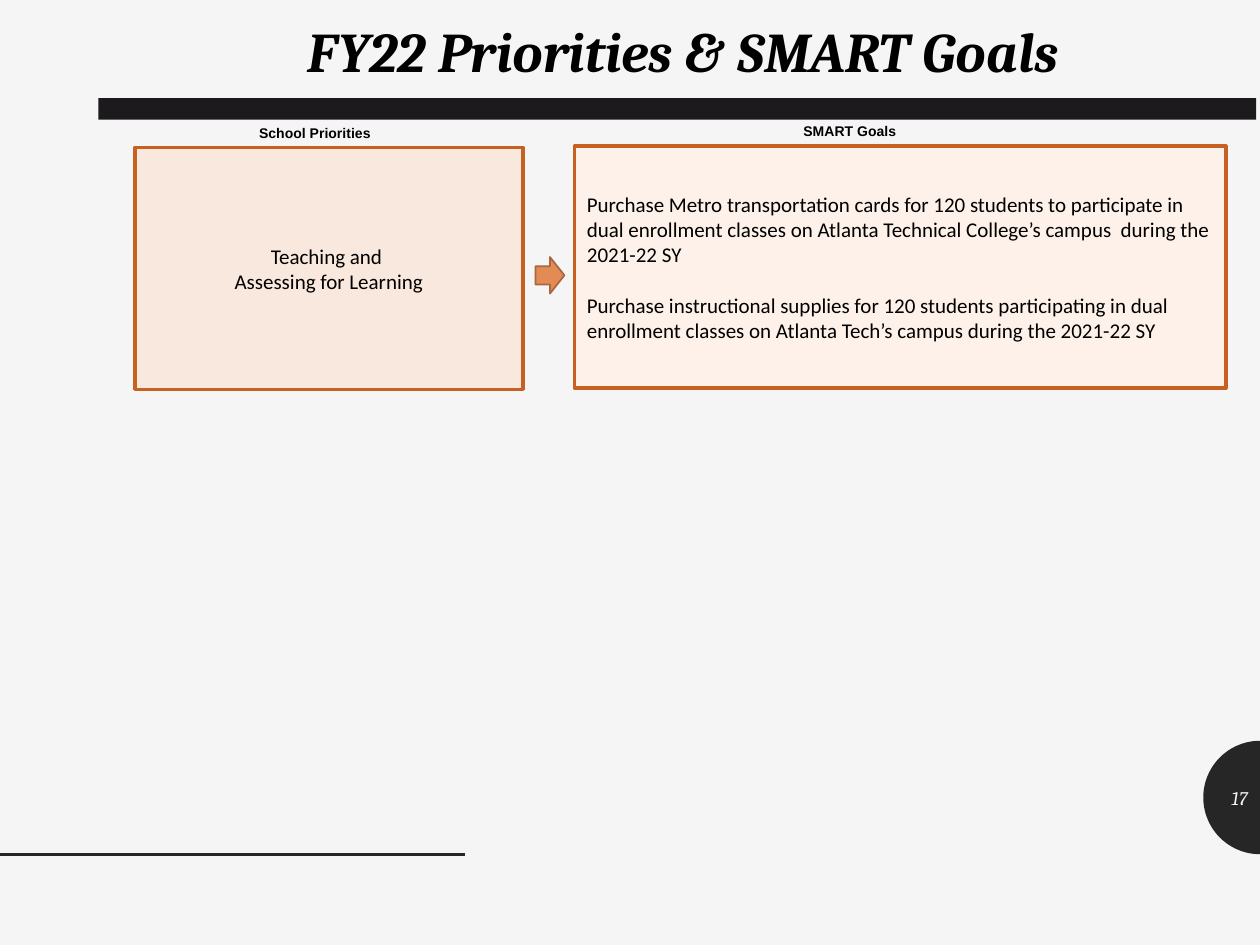
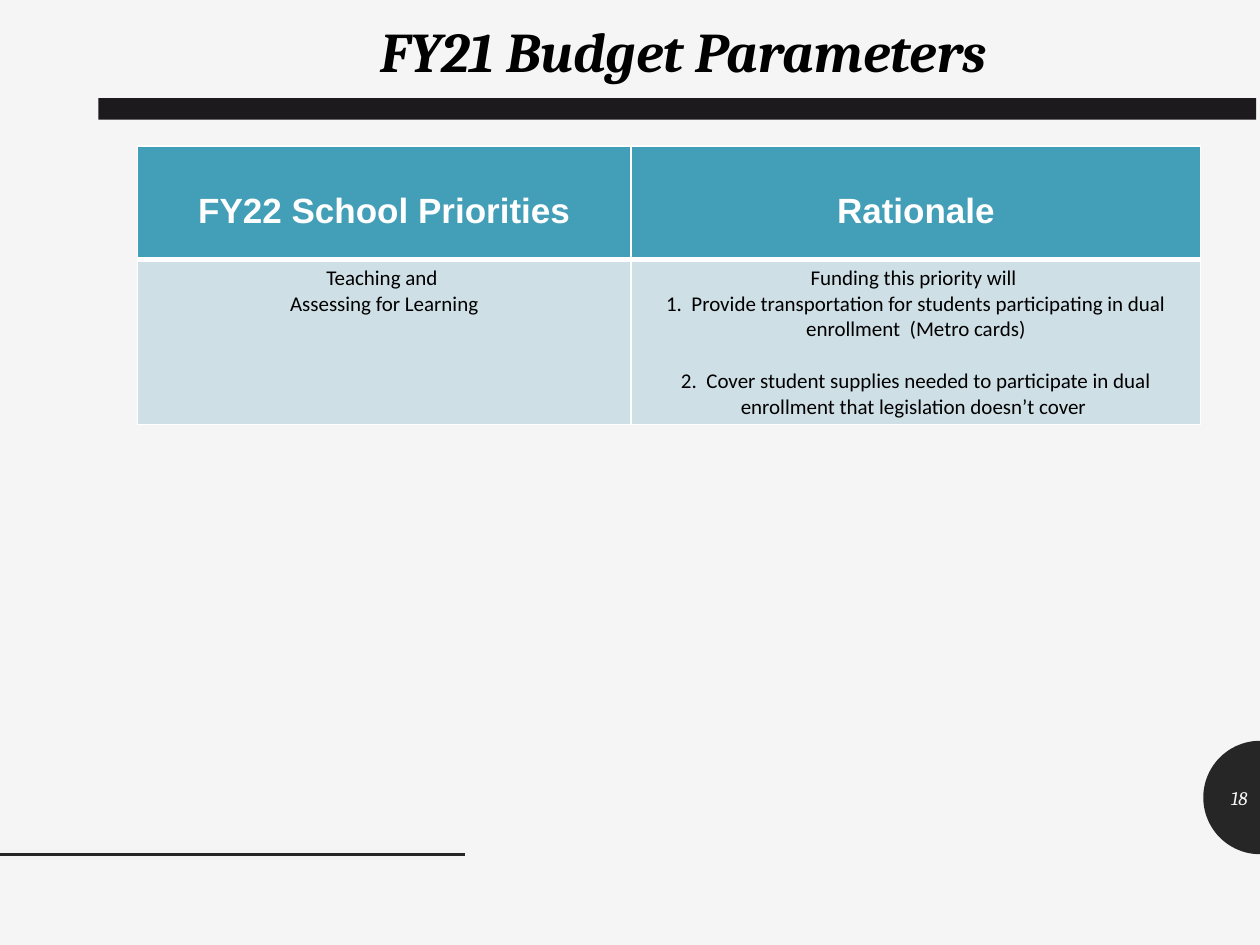
from math import cos, pi, sin

from lxml.etree import SubElement
from pptx import Presentation
from pptx.dml.color import RGBColor
from pptx.enum.shapes import MSO_CONNECTOR, MSO_SHAPE
from pptx.enum.text import MSO_ANCHOR, PP_ALIGN
from pptx.oxml.ns import qn
from pptx.util import Inches, Pt

# Colours
PAPER = RGBColor(0xF5, 0xF5, 0xF5)
DARK = RGBColor(0x26, 0x26, 0x26)
BAND = RGBColor(0x1D, 0x1A, 0x1D)
BLACK = RGBColor(0x00, 0x00, 0x00)
WHITE = RGBColor(0xFF, 0xFF, 0xFF)
RUST = RGBColor(0xC7, 0x61, 0x22)
PEACH = RGBColor(0xF9, 0xE8, 0xDD)
CREAM = RGBColor(0xFD, 0xF1, 0xE9)
ORANGE = RGBColor(0xE2, 0x8B, 0x55)
BROWN = RGBColor(0xA7, 0x67, 0x3F)
TEAL = RGBColor(0x43, 0x9E, 0xB7)
MIST = RGBColor(0xCF, 0xDF, 0xE6)

# Wording
PRIORITY = ["Teaching and ", "Assessing for Learning"]
GOALS = [
    "Purchase Metro transportation cards for 120 students to participate in "
    "dual enrollment classes on Atlanta Technical College’s campus  during "
    "the 2021-22 SY",
    "Purchase instructional supplies for 120 students participating in dual "
    "enrollment classes on Atlanta Tech’s campus during the 2021-22 SY",
]
REASONS = [
    "Funding this priority will ",
    "1.  Provide transportation for students participating in dual "
    "enrollment  (Metro cards)",
    "2.  Cover student supplies needed to participate in dual enrollment "
    "that legislation doesn’t cover ",
]


def put_text(frame, lines, size, font="Calibri", color=BLACK, bold=False,
             italic=False, align=PP_ALIGN.CENTER, gap=0):
    """Write one paragraph per line; gap is the space before the last."""
    frame.text = "\n".join(lines)
    frame.word_wrap = True
    for para in frame.paragraphs:
        para.alignment = align
        for run in para.runs:
            run.font.name = font
            run.font.size = Pt(size)
            run.font.bold = bold
            run.font.italic = italic
            run.font.color.rgb = color
    if gap:
        frame.paragraphs[-1].space_before = Pt(gap)


def add_label(slide, box, text, size, font, **style):
    label = slide.shapes.add_textbox(*map(Inches, box))
    put_text(label.text_frame, [text], size, font, **style)
    return label.text_frame


def paint(shape, fill, line=None, width=0):
    shape.shadow.inherit = False
    shape.fill.solid()
    shape.fill.fore_color.rgb = fill
    if line is None:
        shape.line.fill.background()
    else:
        shape.line.color.rgb = line
        shape.line.width = Pt(width)


def add_block(slide, kind, box, fill, line=None, width=0):
    block = slide.shapes.add_shape(kind, *map(Inches, box))
    paint(block, fill, line, width)
    return block


def add_card(slide, box, fill, lines, **style):
    card = add_block(slide, MSO_SHAPE.RECTANGLE, box, fill, RUST, 2)
    card.text_frame.vertical_anchor = MSO_ANCHOR.MIDDLE
    put_text(card.text_frame, lines, 12, **style)


def add_disc(slide, mid_x, mid_y, radius, steps=48):
    """Left half of a disc, cut off by the slide edge."""
    turns = [pi / 2 + pi * i / steps for i in range(steps + 1)]
    points = [(Inches(mid_x + radius * cos(t)), Inches(mid_y - radius * sin(t)))
              for t in turns]
    outline = slide.shapes.build_freeform(*points[0])
    outline.add_line_segments(points[1:], close=True)
    paint(outline.convert_to_shape(), DARK)


def add_rule(slide, left, right, y):
    rule = slide.shapes.add_connector(
        MSO_CONNECTOR.STRAIGHT, Inches(left), Inches(y), Inches(right), Inches(y))
    rule.line.color.rgb = DARK
    rule.line.width = Pt(2)
    SubElement(rule._element.spPr, qn("a:effectLst"))


def add_base(deck, title, number):
    """Start a slide with the shared title, band, rule and page number."""
    slide = deck.slides.add_slide(deck.slide_layouts[6])
    slide.background.fill.solid()
    slide.background.fill.fore_color.rgb = PAPER
    add_disc(slide, 10, 6.33, 0.45)
    add_rule(slide, 0, 3.69, 6.78)
    add_block(slide, MSO_SHAPE.RECTANGLE, (0.78, 0.78, 9.19, 0.17), BAND)
    add_label(slide, (0.96, 0.08, 8.93, 0.64), title, 32, "Cambria",
              bold=True, italic=True)
    page = add_label(slide, (9.55, 6.13, 0.45, 0.4), str(number), 11, "Cambria",
                     color=PAPER, italic=True, align=PP_ALIGN.RIGHT)
    page.vertical_anchor = MSO_ANCHOR.MIDDLE
    return slide


def style_cell(cell, fill, base):
    """White borders, with the bottom one base points wide, and a fill."""
    props = cell._tc.get_or_add_tcPr()
    for side, width in (("L", 1), ("R", 1), ("T", 1), ("B", base)):
        edge = SubElement(props, qn("a:ln" + side), w=str(Pt(width)))
        SubElement(SubElement(edge, qn("a:solidFill")), qn("a:srgbClr"),
                   val=str(WHITE))
    cell.fill.solid()
    cell.fill.fore_color.rgb = fill


def add_grid(slide, box, widths, heights, heads, texts):
    grid = slide.shapes.add_table(2, len(heads), *map(Inches, box)).table
    for col, width in zip(grid.columns, widths):
        col.width = Inches(width)
    for row, height in zip(grid.rows, heights):
        row.height = Inches(height)
    for i, (head, lines) in enumerate(zip(heads, texts)):
        top, body = grid.cell(0, i), grid.cell(1, i)
        style_cell(top, TEAL, 3)
        style_cell(body, MIST, 1)
        top.margin_top = Inches(0.36)
        put_text(top.text_frame, [head], 20, "Arial", WHITE, bold=True)
        put_text(body.text_frame, lines, 12, gap=15 if len(lines) > 2 else 0)


def add_goals(deck):
    slide = add_base(deck, "FY22 Priorities & SMART Goals", 17)
    left = add_label(slide, (1.95, 0.94, 1.1, 0.24), "School Priorities", 8,
                     "Arial", bold=True)
    left.word_wrap = False
    add_label(slide, (6.1, 0.92, 1.29, 0.24), "SMART Goals", 8, "Arial", bold=True)
    add_card(slide, (4.56, 1.16, 5.17, 1.92), CREAM, GOALS,
             align=PP_ALIGN.LEFT, gap=14.5)
    add_card(slide, (1.07, 1.17, 3.08, 1.92), PEACH, PRIORITY)
    add_block(slide, MSO_SHAPE.RIGHT_ARROW, (4.25, 2.04, 0.23, 0.29),
              ORANGE, BROWN, 1)


def add_budget(deck):
    slide = add_base(deck, "FY21 Budget Parameters", 18)
    add_grid(slide, (1.09, 1.16, 8.44, 2.2), (3.92, 4.52), (0.9, 1.3),
             ("FY22 School Priorities", "Rationale"), (PRIORITY, REASONS))


def main():
    deck = Presentation()
    deck.slide_width, deck.slide_height = Inches(10), Inches(7.5)
    add_goals(deck)
    add_budget(deck)
    deck.save("out.pptx")


if __name__ == "__main__":
    main()
